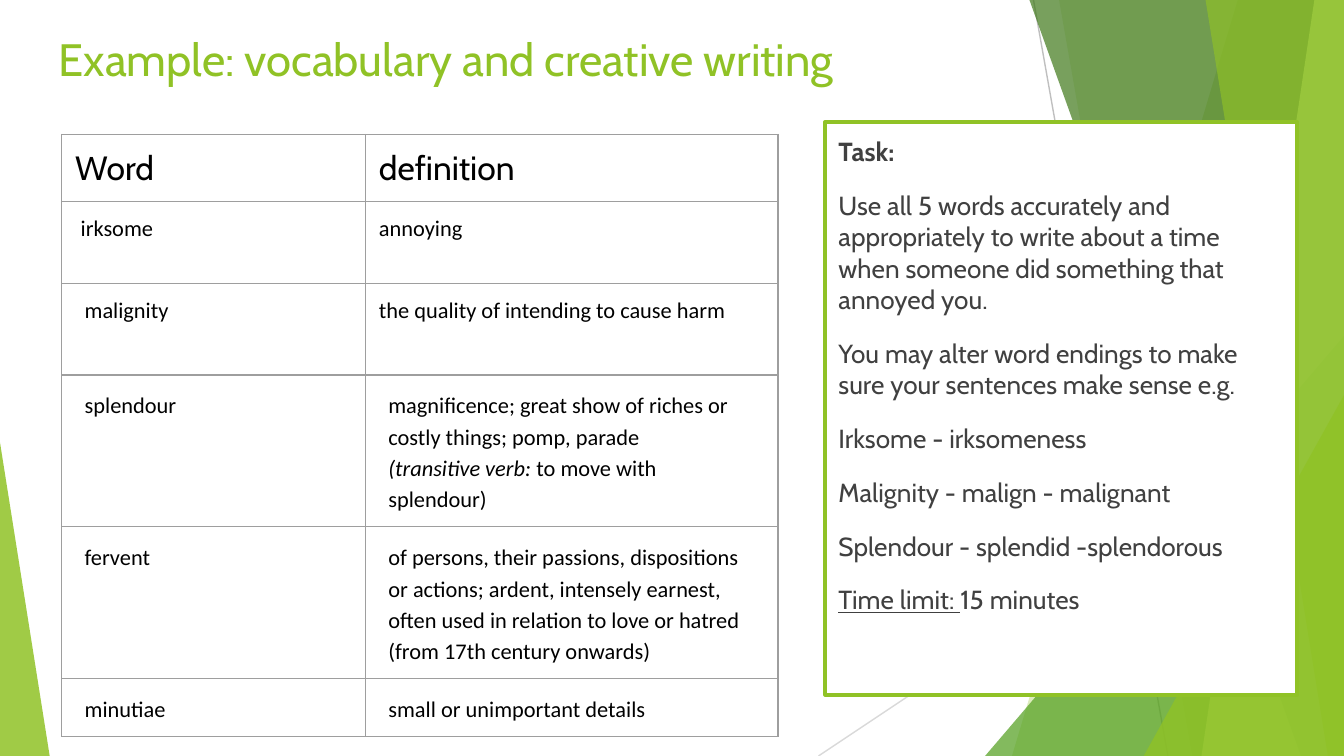
"""Build a vocabulary slide with a word table and a writing task."""
from dataclasses import dataclass

from lxml import etree
from pptx import Presentation
from pptx.dml.color import RGBColor
from pptx.enum.shapes import MSO_CONNECTOR, MSO_SHAPE
from pptx.enum.text import MSO_ANCHOR, PP_ALIGN
from pptx.oxml.ns import qn
from pptx.util import Inches, Pt

STRAIGHT = MSO_CONNECTOR.STRAIGHT
TRIANGLE = MSO_SHAPE.ISOSCELES_TRIANGLE
RECTANGLE = MSO_SHAPE.RECTANGLE
TOP = MSO_ANCHOR.TOP
LEFT = PP_ALIGN.LEFT

WIDTH = 10
HEIGHT = WIDTH * 9 / 16
GREEN, DARK, BLACK, WHITE, GREY = "90C226", "404040", "000000", "FFFFFF", "9E9E9E"
HEADING_FONT, TABLE_FONT = "Cabin", "Calibri"


@dataclass
class Ray:
    start: tuple[float, float]
    end: tuple[float, float]
    color: str


@dataclass
class Wedge:
    top_x: float
    bottom_x: float
    color: str
    opacity: int


@dataclass
class Corner:
    left: float
    top: float
    width: float
    apex: float
    color: str
    opacity: int


@dataclass
class Span:
    text: str
    bold: bool = False
    italic: bool = False
    underline: bool = False


@dataclass
class Entry:
    word: str
    definition: list[list[Span]]
    height: float
    word_indent: float = 0.07
    definition_indent: float = 0.07
    spacing: float = 1.15
    size: float = 12
    font: str = TABLE_FONT


RAYS = [
    Ray((7.69, 0), (8.69, HEIGHT), "BFBFBF"),
    Ray((10, 3.02), (6.09, HEIGHT), "D9D9D9"),
]
FACETS = [
    Wedge(9.21, 7.53, GREEN, 30),
    Wedge(7.88, 8.87, GREEN, 20),
    Corner(7.33, 2.5, 2.67, 1, "54A021", 72),
    Wedge(7.66, 9.68, "3F7819", 70),
    Wedge(9.78, 8.94, "C0E474", 70),
    Wedge(8.97, 9.88, GREEN, 65),
    Corner(8.51, 2.94, 1.49, 1, GREEN, 80),
    Corner(0, 3.29, 0.37, 0, GREEN, 85),
]
TITLE = [[Span("Example: vocabulary and creative writing")]]
TASK = [
    [Span("Task:", bold=True)],
    [Span("Use all 5 words accurately and appropriately to write about a time "
          "when someone did something that annoyed you.")],
    [Span("You may alter word endings to make sure your sentences make sense e.g.")],
    [Span("Irksome - irksomeness")],
    [Span("Malignity - malign - malignant")],
    [Span("Splendour - splendid -splendorous")],
    [Span("Time limit: ", underline=True), Span("15 minutes")],
]
COLUMNS = [2.26, 3.07]
ENTRIES = [
    Entry("Word", [[Span("definition")]], 0.5, 0, 0, 1, 18, HEADING_FONT),
    Entry("irksome", [[Span("annoying")]], 0.61, 0.04, 0, 1),
    Entry("malignity", [[Span("the quality of intending to cause harm")]],
          0.68, 0.07, 0, 1),
    Entry("splendour", [
        [Span("magnificence; great show of riches or costly things; pomp, parade")],
        [Span("(transitive verb:", italic=True), Span(" to move with splendour)")],
    ], 1.13),
    Entry("fervent", [[Span(
        "of persons, their passions, dispositions or actions; ardent, intensely "
        "earnest, often used in relation to love or hatred (from 17th century "
        "onwards)")]], 1.13),
    Entry("minutiae", [[Span("small or unimportant details")]], 0.43),
]


def rgb(color: str) -> RGBColor:
    """Turn a hex string into a colour."""
    return RGBColor.from_string(color)


def draw_ray(shapes, ray: Ray) -> None:
    """Draw one thin background line."""
    line = shapes.add_connector(STRAIGHT, *map(Inches, ray.start + ray.end))
    line.line.color.rgb = rgb(ray.color)
    line.line.width = Pt(0.75)
    etree.SubElement(line._element.spPr, qn("a:effectLst"))


def draw_facet(shapes, facet: Wedge | Corner) -> None:
    """Draw one translucent background facet."""
    if isinstance(facet, Wedge):
        corners = [(WIDTH, 0), (WIDTH, HEIGHT), (facet.bottom_x, HEIGHT)]
        builder = shapes.build_freeform(Inches(facet.top_x), 0)
        builder.add_line_segments([(Inches(x), Inches(y)) for x, y in corners])
        shape = builder.convert_to_shape()
    else:
        shape = shapes.add_shape(
            TRIANGLE, Inches(facet.left), Inches(facet.top),
            Inches(facet.width), Inches(HEIGHT - facet.top))
        shape.adjustments[0] = facet.apex
    shape.shadow.inherit = False
    shape.line.fill.background()
    shape.fill.solid()
    shape.fill.fore_color.rgb = rgb(facet.color)
    tint = shape._element.spPr.find(qn("a:solidFill"))[0]
    etree.SubElement(tint, qn("a:alpha"), val=str(facet.opacity * 1000))


def write(frame, paragraphs: list[list[Span]], size: float, font: str, color: str,
          gap: float = 0, indent: float = 0, spacing: float = 1) -> None:
    """Fill a text frame with formatted paragraphs."""
    frame.word_wrap = True
    for index, spans in enumerate(paragraphs):
        paragraph = frame.add_paragraph() if index else frame.paragraphs[0]
        paragraph.alignment = LEFT
        paragraph.line_spacing = spacing
        paragraph.space_before = Pt(gap if index else 0)
        if indent:
            for side in ("marL", "marR"):
                paragraph._p.get_or_add_pPr().set(side, str(Inches(indent)))
        for span in spans:
            run = paragraph.add_run()
            run.text = span.text
            run.font.size, run.font.name = Pt(size), font
            run.font.color.rgb = rgb(color)
            run.font.bold, run.font.italic = span.bold, span.italic
            run.font.underline = span.underline


def set_margins(holder) -> None:
    """Give a text frame or cell equal inner margins."""
    holder.margin_left = holder.margin_right = Inches(0.1)
    holder.margin_top = holder.margin_bottom = Inches(0.1)
    holder.vertical_anchor = TOP


def style_cell(cell) -> None:
    """Give a cell its margins, thin borders and no fill."""
    set_margins(cell)
    properties = cell._tc.get_or_add_tcPr()
    for side in ("lnL", "lnR", "lnT", "lnB"):
        border = etree.SubElement(properties, qn(f"a:{side}"), w=str(Pt(0.75)))
        fill = etree.SubElement(border, qn("a:solidFill"))
        etree.SubElement(fill, qn("a:srgbClr"), val=GREY)
    cell.fill.background()


def draw_vocabulary(shapes) -> None:
    """Draw the table of words and definitions."""
    table = shapes.add_table(
        len(ENTRIES), len(COLUMNS), Inches(0.46), Inches(1), Inches(sum(COLUMNS)),
        Inches(sum(entry.height for entry in ENTRIES))).table
    table.first_row = table.horz_banding = False
    for column, width in zip(table.columns, COLUMNS):
        column.width = Inches(width)
    for row, entry in zip(table.rows, ENTRIES):
        row.height = Inches(entry.height)
        contents = [([[Span(entry.word)]], entry.word_indent),
                    (entry.definition, entry.definition_indent)]
        for cell, (paragraphs, indent) in zip(row.cells, contents):
            style_cell(cell)
            write(cell.text_frame, paragraphs, entry.size, entry.font, BLACK,
                  indent=indent, spacing=entry.spacing)


def main() -> None:
    """Build and save the slide."""
    deck = Presentation()
    deck.slide_width, deck.slide_height = Inches(WIDTH), Inches(HEIGHT)
    shapes = deck.slides.add_slide(deck.slide_layouts[6]).shapes
    for ray in RAYS:
        draw_ray(shapes, ray)
    for facet in FACETS:
        draw_facet(shapes, facet)

    title = shapes.add_textbox(Inches(0.34), Inches(0.13), Inches(9.32), Inches(0.63))
    set_margins(title.text_frame)
    write(title.text_frame, TITLE, 24.3, HEADING_FONT, GREEN)

    task = shapes.add_shape(
        RECTANGLE, Inches(6.14), Inches(0.91), Inches(3.51), Inches(4.26))
    task.shadow.inherit = False
    task.fill.solid()
    task.fill.fore_color.rgb = rgb(WHITE)
    task.line.color.rgb = rgb(GREEN)
    task.line.width = Pt(2.25)
    set_margins(task.text_frame)
    write(task.text_frame, TASK, 14, HEADING_FONT, DARK, gap=12)

    draw_vocabulary(shapes)
    deck.save("out.pptx")


if __name__ == "__main__":
    main()
